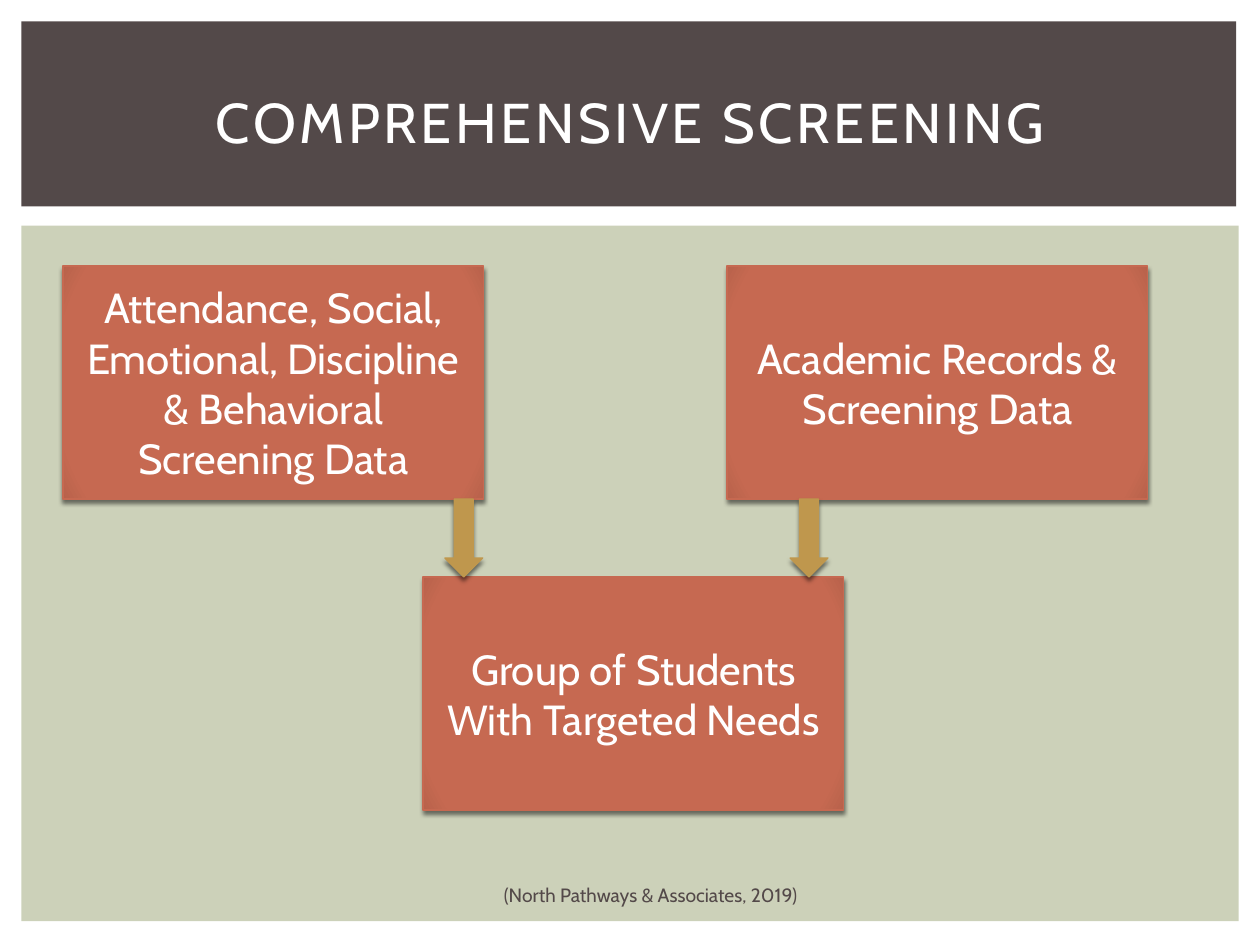
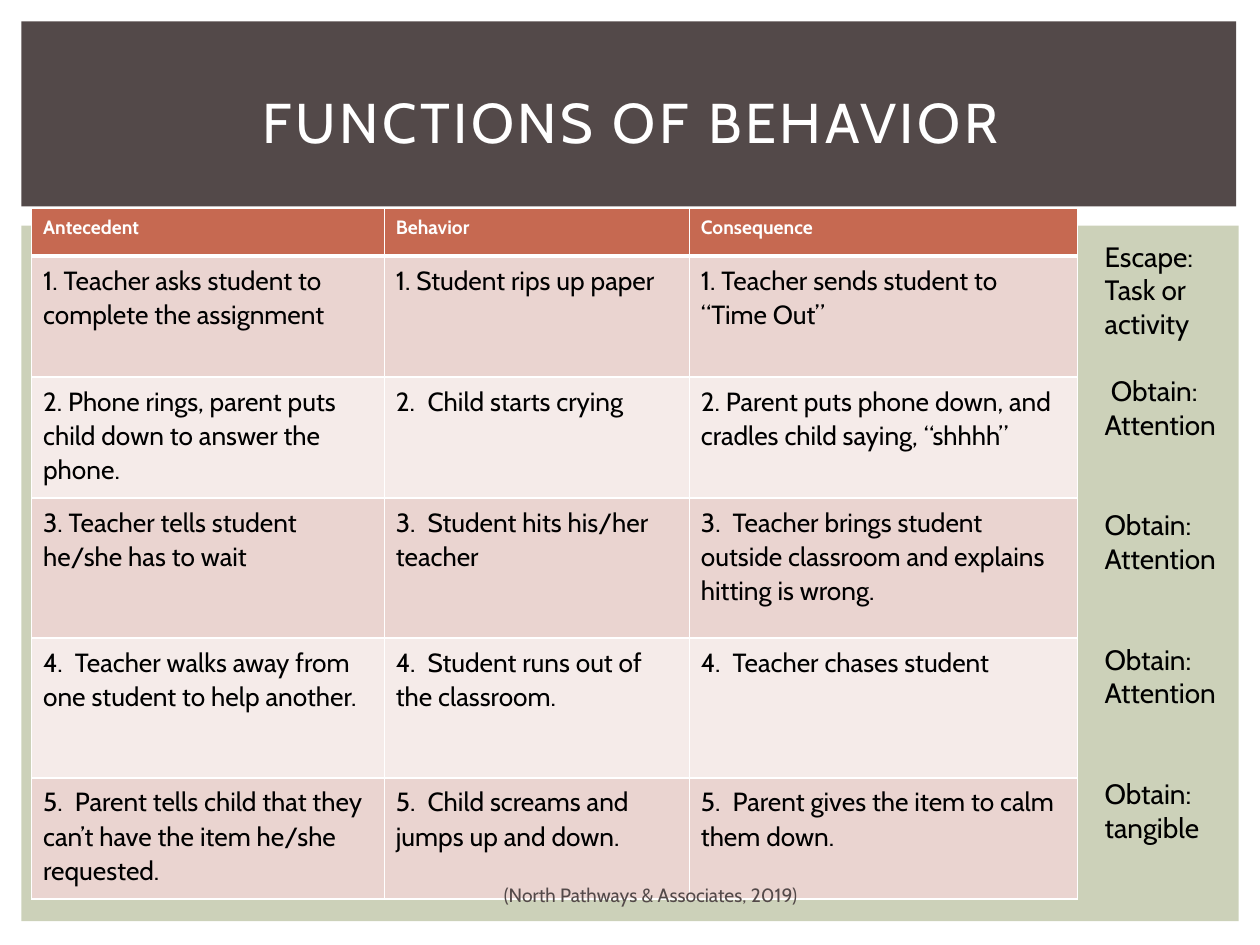
"""Builds two slides on behavior screening with a shared band, body panel and source line."""
from dataclasses import dataclass

from pptx import Presentation
from pptx import util as u
from pptx.dml.color import RGBColor
from pptx.enum import shapes, text
from pptx.oxml import parse_xml
from pptx.oxml.ns import nsdecls, qn


@dataclass(frozen=True)
class Theme:
    font: str = "Cabin"
    white: str = "FFFFFF"
    black: str = "000000"
    band: str = "534949"
    body: str = "CCD1B9"
    card: str = "C66951"
    card_edge: str = "B8624B"
    arrow: str = "BF974D"
    rows: tuple = ("EAD4D0", "F5EBE9")
    title_size: float = 32
    card_size: float = 24
    side_size: float = 16
    cell_size: float = 15
    small_size: float = 11


SOURCE = "(North Pathways & Associates, 2019)"
CARD_W, CARD_H = 8.48, 4.7
ARROW_W, ARROW_H = 0.76, 1.57
TOP_ROW = 5.36
ARROW_TOP = TOP_ROW + CARD_H
BOTTOM_ROW = ARROW_TOP + ARROW_H

CARDS = [
    ("Attendance, Social, Emotional, Discipline & Behavioral Screening Data", 1.27, TOP_ROW),
    ("Academic Records & Screening Data", 14.66, TOP_ROW),
    ("Group of Students With Targeted Needs", 8.53, BOTTOM_ROW),
]
ARROW_LEFTS = [15.93, 8.97]

COLUMN_WIDTHS = [7.11, 6.15, 7.82]
ROW_HEIGHTS = [0.97, 2.44, 2.44, 2.82, 2.82, 2.44]
BEHAVIORS = [
    ["Antecedent", "Behavior", "Consequence"],
    ["1. Teacher asks student to complete the assignment",
     "1. Student rips up paper",
     "1. Teacher sends student to “Time Out”"],
    ["2. Phone rings, parent puts child down to answer the phone.",
     "2.\tChild starts crying",
     "2. Parent puts phone down, and cradles child saying, “shhhh”"],
    ["3. Teacher tells student he/she has to wait",
     "3.\tStudent hits his/her teacher",
     "3.\tTeacher brings student outside classroom and explains hitting is wrong."],
    ["4.\tTeacher walks away from one student to help another.",
     "4.\tStudent runs out of the classroom.",
     "4.\tTeacher chases student"],
    ["5.\tParent tells child that they can’t have the item he/she requested.",
     "5.\tChild screams and jumps up and down.",
     "5.\tParent gives the item to calm them down."],
]

SIDE_LINE = 19.2
FUNCTIONS = [
    ("Escape:", 0),
    ("Task or activity", 0),
    (" Obtain:", SIDE_LINE),
    ("Attention", 0),
    ("Obtain:", 2 * SIDE_LINE),
    ("Attention", 0),
    ("Obtain:", 2 * SIDE_LINE),
    ("Attention", 0),
    ("Obtain: tangible", 2 * SIDE_LINE),
]


def write(tf, lines, size, color, font=Theme.font, bold=False, align=text.PP_ALIGN.LEFT,
          anchor=text.MSO_ANCHOR.TOP, tracking=0, spacing=None, after=0, tab=None):
    """Fill a text frame with (text, space before) lines in one format."""
    if isinstance(lines, str):
        lines = [(lines, 0)]
    tf.word_wrap = True
    tf.vertical_anchor = anchor
    for i, (line, before) in enumerate(lines):
        p = tf.paragraphs[0] if i == 0 else tf.add_paragraph()
        p.alignment = align
        p.space_before, p.space_after = u.Pt(before), u.Pt(after)
        if spacing:
            p.line_spacing = spacing
        if tab:
            p._p.get_or_add_pPr().append(parse_xml(
                f'<a:tabLst {nsdecls("a")}><a:tab pos="{u.Cm(tab)}" algn="l"/></a:tabLst>'))
        r = p.add_run()
        r.text = line
        r.font.name, r.font.size, r.font.bold = font, u.Pt(size), bold
        r.font.color.rgb = RGBColor.from_string(color)
        if tracking:
            r._r.get_or_add_rPr().set("spc", str(tracking * 100))


class Deck:
    """Holds the presentation, its theme and the current slide."""

    def __init__(self, theme):
        self.t = theme
        self.prs = Presentation()
        self.prs.slide_width, self.prs.slide_height = u.Cm(25.4), u.Cm(19.05)
        self.s = None

    def slide(self):
        """Start a slide with the body panel and the title band."""
        self.s = self.prs.slides.add_slide(self.prs.slide_layouts[6])
        self.shape((0.43, 4.55, 24.54, 14.02), self.t.body)
        self.shape((0.43, 0.43, 24.49, 3.73), self.t.band)

    def shape(self, box, fill, kind=shapes.MSO_SHAPE.RECTANGLE, raised=False):
        """Add a filled shape, outlined and shadowed when raised."""
        sp = self.s.shapes.add_shape(kind, *map(u.Cm, box))
        sp.shadow.inherit = False
        sp.fill.solid()
        sp.fill.fore_color.rgb = RGBColor.from_string(fill)
        if raised:
            sp.line.color.rgb = RGBColor.from_string(fill)
            sp.line.width = u.Pt(0.79)
            sp._element.spPr.find(qn("a:effectLst")).append(parse_xml(
                f'<a:outerShdw {nsdecls("a")} blurRad="{u.Pt(2.5)}" dist="{u.Pt(2)}" '
                f'dir="5400000" rotWithShape="0"><a:srgbClr val="{self.t.black}">'
                '<a:alpha val="50000"/></a:srgbClr></a:outerShdw>'))
        else:
            sp.line.fill.background()
        return sp

    def textbox(self, box, lines, size, color, **fmt):
        """Add a wrapped text box."""
        sp = self.s.shapes.add_textbox(*map(u.Cm, box))
        write(sp.text_frame, lines, size, color, **fmt)

    def title(self, words):
        """Add the title over the band."""
        self.textbox((1.07, 0.99, 23.29, 2.92), words, self.t.title_size, self.t.white,
                     align=text.PP_ALIGN.CENTER, anchor=text.MSO_ANCHOR.MIDDLE, tracking=2)

    def source(self):
        """Add the source line at the foot."""
        self.textbox((8.46, 17.65, 9.32, 0.76), SOURCE, self.t.small_size, self.t.band,
                     align=text.PP_ALIGN.CENTER, anchor=text.MSO_ANCHOR.MIDDLE)

    def card(self, words, left, top):
        """Add a raised card whose corners darken."""
        sp = self.shape((left, top, CARD_W, CARD_H), self.t.card, raised=True)
        stops = [(0, self.t.card), (90, self.t.card), (100, self.t.card_edge)]
        gs = "".join(f'<a:gs pos="{pos * 1000}"><a:srgbClr val="{c}"/></a:gs>' for pos, c in stops)
        spPr = sp._element.spPr
        spPr.replace(spPr.find(qn("a:solidFill")), parse_xml(
            f'<a:gradFill {nsdecls("a")} rotWithShape="1"><a:gsLst>{gs}</a:gsLst>'
            '<a:path path="circle"><a:fillToRect l="100000" t="100000" r="100000" b="100000"/>'
            '</a:path></a:gradFill>'))
        write(sp.text_frame, words, self.t.card_size, self.t.white,
              align=text.PP_ALIGN.CENTER, anchor=text.MSO_ANCHOR.MIDDLE)

    def arrow(self, left):
        """Add a down arrow between the card rows."""
        self.shape((left, ARROW_TOP, ARROW_W, ARROW_H), self.t.arrow,
                   shapes.MSO_SHAPE.DOWN_ARROW, raised=True)

    def cell(self, cell, words, row):
        """Format one table cell by its row."""
        header = row == 0
        widths = {"L": 1, "R": 1, "T": 3 if row == 1 else 1, "B": 3 if header else 1}
        tcPr = cell._tc.get_or_add_tcPr()
        for side, width in widths.items():
            tcPr.append(parse_xml(
                f'<a:ln{side} {nsdecls("a")} w="{u.Pt(width)}"><a:solidFill>'
                f'<a:srgbClr val="{self.t.white}"/></a:solidFill></a:ln{side}>'))
        cell.fill.solid()
        cell.fill.fore_color.rgb = RGBColor.from_string(
            self.t.card if header else self.t.rows[(row - 1) % 2])
        cell.margin_left = cell.margin_right = u.Cm(0.23)
        cell.margin_top = cell.margin_bottom = u.Cm(0.13)
        write(cell.text_frame, words,
              self.t.small_size if header else self.t.cell_size,
              self.t.white if header else self.t.black,
              bold=header, spacing=1.07, after=8, tab=0.64)

    def table(self, left, top, rows, widths, heights):
        """Add a banded table with a header row."""
        box = (left, top, sum(widths), sum(heights))
        tbl = self.s.shapes.add_table(len(rows), len(widths), *map(u.Cm, box)).table
        for col, width in zip(tbl.columns, widths):
            col.width = u.Cm(width)
        for i, (words, height) in enumerate(zip(rows, heights)):
            tbl.rows[i].height = u.Cm(height)
            for j, word in enumerate(words):
                self.cell(tbl.cell(i, j), word, i)


def main():
    """Build both slides and save them."""
    deck = Deck(Theme())

    deck.slide()
    deck.title("COMPREHENSIVE SCREENING")
    for card in CARDS:
        deck.card(*card)
    for left in ARROW_LEFTS:
        deck.arrow(left)
    deck.source()

    deck.slide()
    deck.table(0.64, 4.19, BEHAVIORS, COLUMN_WIDTHS, ROW_HEIGHTS)
    deck.title("FUNCTIONS OF BEHAVIOR")
    deck.textbox((22.02, 4.7, 2.97, 12.57), FUNCTIONS, deck.t.side_size, deck.t.black)
    deck.source()

    deck.prs.save("out.pptx")


if __name__ == "__main__":
    main()
